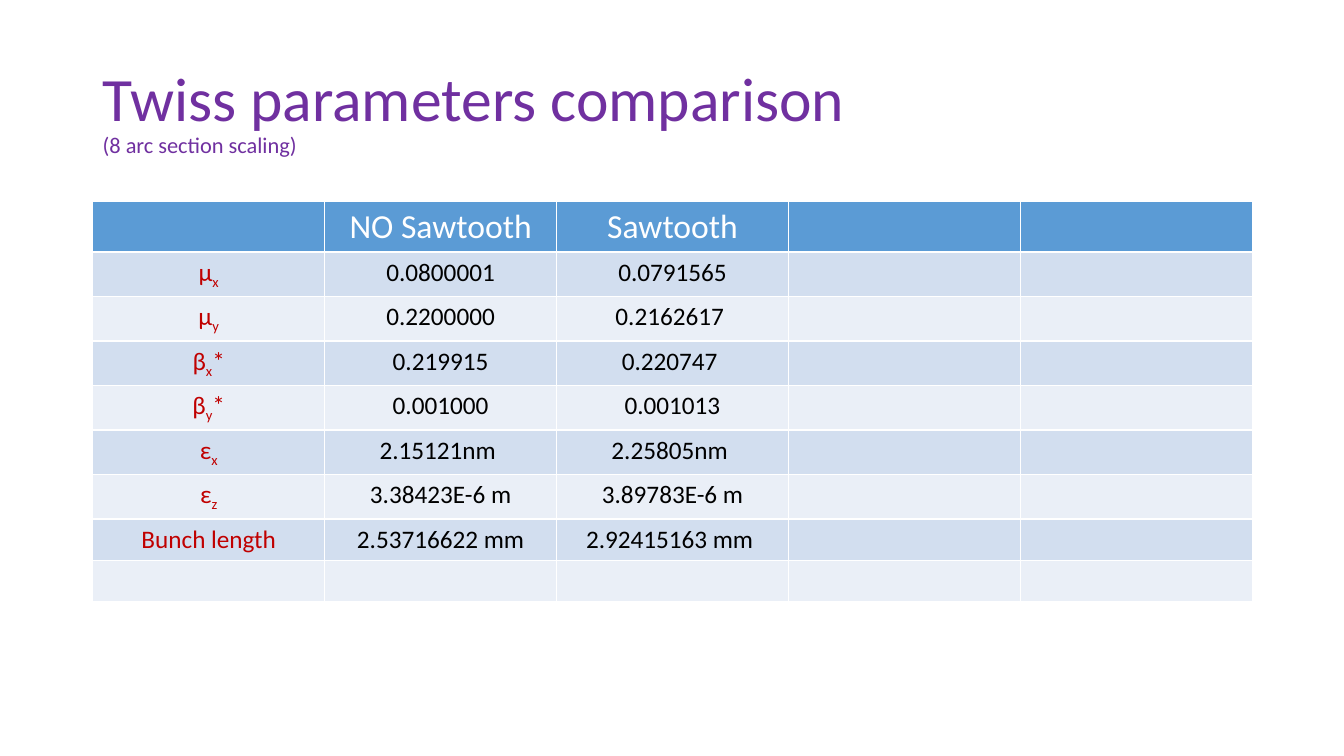
from pptx import Presentation
from pptx.dml.color import RGBColor
from pptx.enum.text import MSO_ANCHOR, PP_ALIGN
from pptx.util import Inches, Pt

CENTER = PP_ALIGN.CENTER
MIDDLE = MSO_ANCHOR.MIDDLE
FONT = "Calibri"
COLORS = {
    "title": "7030A0",
    "header": "5B9BD5",
    "header_text": "FFFFFF",
    "band_dark": "D2DEEF",
    "band_light": "EAEFF7",
    "label": "C00000",
    "value": "000000",
}
COLUMN_COUNT = 5
ROW_HEIGHT = 0.41
HEADERS = ["NO Sawtooth", "Sawtooth"]
PARAMETERS = [
    (("μ", "x"), "0.0800001", "0.0791565"),
    (("μ", "y"), "0.2200000", "0.2162617 "),
    (("β", "x", "*"), "0.219915", "0.220747 "),
    (("β", "y", "*"), "0.001000", " 0.001013 "),
    (("ε", "x"), "2.15121nm ", "2.25805nm "),
    (("ε", "z"), "3.38423E-6 m", "3.89783E-6 m"),
    (("Bunch length",), "2.53716622 mm", "2.92415163 mm "),
]


def add_run(paragraph, text, size, color, subscript=False):
    """Append one styled run to a paragraph."""
    run = paragraph.add_run()
    run.text = text
    run.font.name = FONT
    run.font.size = Pt(size)
    run.font.bold = False
    run.font.color.rgb = RGBColor.from_string(COLORS[color])
    if subscript:
        run.font._element.set("baseline", "-25000")


def add_title(slide, left, top, width, height):
    """Place the heading with its small second line."""
    shape = slide.shapes.add_textbox(Inches(left), Inches(top), Inches(width), Inches(height))
    frame = shape.text_frame
    frame.word_wrap = True
    frame.vertical_anchor = MIDDLE
    paragraph = frame.paragraphs[0]
    paragraph.line_spacing = 0.9
    add_run(paragraph, "Twiss parameters comparison", 44, "title")
    paragraph.add_line_break()
    add_run(paragraph, "(8 arc section scaling)", 16, "title")


def fill_cell(cell, parts, size, color):
    """Write centred text in a cell, with the second part as a subscript."""
    paragraph = cell.text_frame.paragraphs[0]
    paragraph.alignment = CENTER
    for index, part in enumerate(parts):
        add_run(paragraph, part, size, color, subscript=index == 1)


def add_parameter_table(slide, left, top, width):
    """Place the banded table, leaving its last row and columns empty."""
    row_count = len(PARAMETERS) + 2
    table = slide.shapes.add_table(
        row_count, COLUMN_COUNT, Inches(left), Inches(top),
        Inches(width), Inches(ROW_HEIGHT * row_count),
    ).table
    for column in table.columns:
        column.width = Inches(width / COLUMN_COUNT)
    for row_index, row in enumerate(table.rows):
        row.height = Inches(ROW_HEIGHT)
        band = "band_dark" if row_index % 2 else "band_light"
        color = band if row_index else "header"
        for cell in row.cells:
            cell.fill.solid()
            cell.fill.fore_color.rgb = RGBColor.from_string(COLORS[color])
    for column_index, header in enumerate(HEADERS, start=1):
        fill_cell(table.cell(0, column_index), [header], 24, "header_text")
    for row_index, (label, *values) in enumerate(PARAMETERS, start=1):
        fill_cell(table.cell(row_index, 0), label, 18, "label")
        for column_index, value in enumerate(values, start=1):
            fill_cell(table.cell(row_index, column_index), [value], 18, "value")


def main():
    """Build and save the slide."""
    presentation = Presentation()
    presentation.slide_width = Inches(13.33)
    presentation.slide_height = Inches(7.5)
    slide = presentation.slides.add_slide(presentation.slide_layouts[6])
    add_title(slide, 0.92, 0.4, 11.5, 1.45)
    add_parameter_table(slide, 0.92, 2, 11.5)
    presentation.save("out.pptx")


if __name__ == "__main__":
    main()
